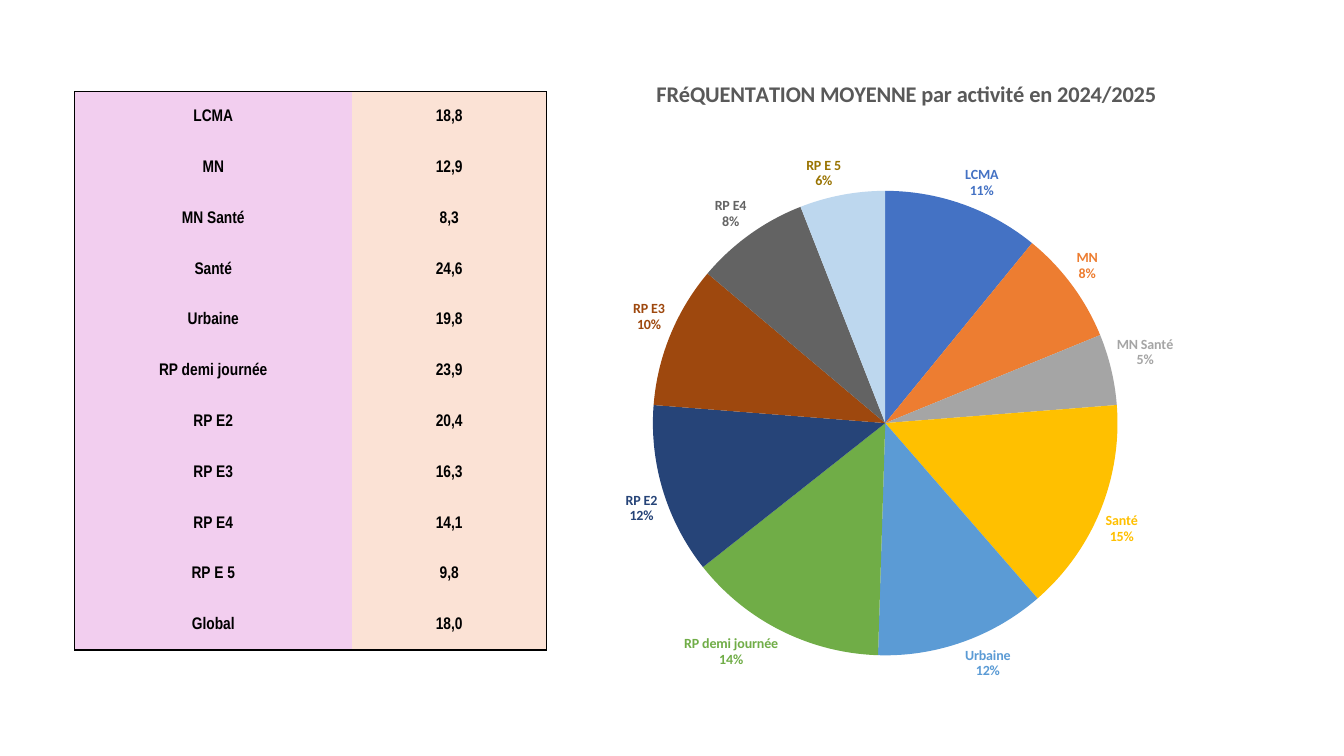
import dataclasses

import lxml.etree
import pptx
import pptx.chart.data
import pptx.dml.color
import pptx.enum.chart
import pptx.enum.text
import pptx.oxml.ns
import pptx.util

Inches = pptx.util.Inches
Pt = pptx.util.Pt
qn = pptx.oxml.ns.qn


@dataclasses.dataclass
class Theme:
    ink: str = "000000"
    grey: str = "595959"
    fills: tuple = ("F2CEEF", "FBE2D5")
    slices: tuple = ("4472C4", "ED7D31", "A5A5A5", "FFC000", "5B9BD5",
                     "70AD47", "264478", "9E480E", "636363", "BDD7EE")
    gold: str = "997300"
    cell_font: str = "Arial Narrow"
    chart_font: str = "Calibri"
    cell_size: int = 12
    label_size: int = 10
    title_size: int = 16


def add(parent, tag, **attrs):
    return lxml.etree.SubElement(parent, qn(tag), attrs)


def place(owner, index, **sizes):
    for old in owner.findall(qn("c:layout")):
        owner.remove(old)
    layout = lxml.etree.Element(qn("c:layout"))
    manual = add(layout, "c:manualLayout")
    if "w" in sizes:
        add(manual, "c:layoutTarget", val="inner")
    add(manual, "c:xMode", val="edge")
    add(manual, "c:yMode", val="edge")
    for key, size in sizes.items():
        add(manual, "c:" + key, val=str(size))
    owner.insert(index, layout)


class Deck:
    def __init__(self, theme):
        self.theme = theme
        self.file = pptx.Presentation()
        self.file.slide_width = Inches(13.33)
        self.file.slide_height = Inches(7.5)
        self.slide = self.file.slides.add_slide(self.file.slide_layouts[6])

    def style(self, font, name, size, color):
        font.name = name
        font.size = Pt(size)
        font.bold = True
        font.color.rgb = pptx.dml.color.RGBColor.from_string(color)

    def edge(self, cell, sides):
        props = cell._tc.get_or_add_tcPr()
        for side in "LRTB":
            line = add(props, "a:ln" + side, w=str(Pt(1)))
            if side in sides:
                fill = add(line, "a:solidFill")
                add(fill, "a:srgbClr", val=self.theme.ink)
            else:
                add(line, "a:noFill")

    def table(self, rows, box, widths):
        theme = self.theme
        table = self.slide.shapes.add_table(
            len(rows), len(widths), *map(Inches, box)).table
        table.first_row = False
        table.horz_banding = False
        for column, width in zip(table.columns, widths):
            column.width = Inches(width)
        last = len(rows) - 1
        for i, row in enumerate(rows):
            ends = ("T" if i == 0 else "") + ("B" if i == last else "")
            for j, text in enumerate(row):
                cell = table.cell(i, j)
                self.edge(cell, "LR"[j] + ends)
                cell.fill.solid()
                cell.fill.fore_color.rgb = pptx.dml.color.RGBColor.from_string(
                    theme.fills[j])
                cell.margin_left = cell.margin_right = Inches(0.01)
                cell.margin_top = Inches(0.01)
                cell.margin_bottom = 0
                cell.vertical_anchor = pptx.enum.text.MSO_ANCHOR.MIDDLE
                cell.text = text
                para = cell.text_frame.paragraphs[0]
                para.alignment = pptx.enum.text.PP_ALIGN.CENTER
                self.style(para.font, theme.cell_font, theme.cell_size, theme.ink)

    def label(self, point, color):
        theme = self.theme
        label = point.data_label
        self.style(label.font, theme.chart_font, theme.label_size, color)
        label.position = pptx.enum.chart.XL_LABEL_POSITION.OUTSIDE_END
        node = label._dLbl
        for tag, flag in (("showVal", "0"), ("showCatName", "1"),
                          ("showPercent", "1")):
            node.find(qn("c:" + tag)).set("val", flag)
        add(node, "c:separator").text = "\n"

    def pie(self, title, names, values, box):
        theme = self.theme
        data = pptx.chart.data.CategoryChartData()
        data.categories = names
        data.add_series("Fréquentation", values)
        chart = self.slide.shapes.add_chart(
            pptx.enum.chart.XL_CHART_TYPE.PIE, *map(Inches, box), data).chart
        chart.has_legend = False
        chart.font.name = theme.chart_font
        chart.font.size = Pt(theme.label_size)
        chart.has_title = True
        para = chart.chart_title.text_frame.paragraphs[0]
        para.text = title
        self.style(para.font, theme.chart_font, theme.title_size, theme.grey)
        place(chart.chart_title._element, 1, x=0.2, y=0.03)
        plot = chart.plots[0]
        plot.vary_by_categories = True
        place(plot._element.getparent(), 0, x=0.2, y=0.21, w=0.56, h=0.72)
        inks = theme.slices[:-1] + (theme.gold,)
        for i, (color, ink) in enumerate(zip(theme.slices, inks)):
            point = plot.series[0].points[i]
            point.format.fill.solid()
            point.format.fill.fore_color.rgb = (
                pptx.dml.color.RGBColor.from_string(color))
            point.format.line.fill.background()
            self.label(point, ink)


def main():
    rows = [("LCMA", "18,8"), ("MN", "12,9"), ("MN Santé", "8,3"),
            ("Santé", "24,6"), ("Urbaine", "19,8"),
            ("RP demi journée", "23,9"), ("RP E2", "20,4"),
            ("RP E3", "16,3"), ("RP E4", "14,1"), ("RP E 5", "9,8"),
            ("Global", "18,0")]
    shares = (11, 8, 5, 15, 12, 14, 12, 10, 8, 6)
    deck = Deck(Theme())
    deck.pie("FRéQUENTATION MOYENNE par activité en 2024/2025",
             [name for name, rate in rows[:-1]], shares,
             (4.82, 0.55, 8.25, 6.4))
    deck.table(rows, (0.74, 0.91, 4.68, 5.54), (2.75, 1.93))
    deck.file.save("out.pptx")


if __name__ == "__main__":
    main()
